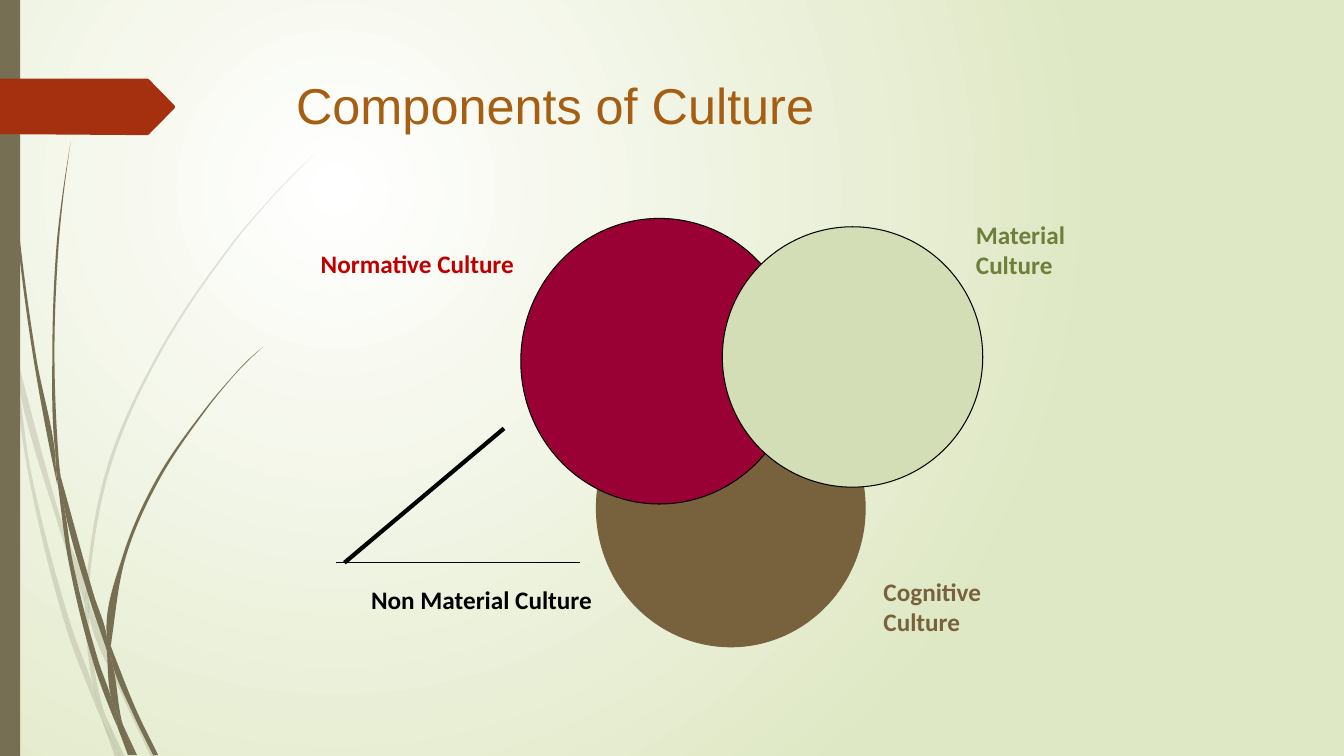
from dataclasses import dataclass

from lxml.etree import SubElement
from pptx import Presentation
from pptx.dml.color import RGBColor as RGB
from pptx.enum.shapes import MSO_CONNECTOR as CONN, MSO_SHAPE as SHAPE
from pptx.oxml import parse_xml
from pptx.oxml.ns import nsdecls, qn
from pptx.util import Pt

COLORS = {
    "white": "FFFFFF", "sage": "DFE8C4", "stem": "766F54", "tag": "A53010",
    "title": "A65E12", "black": "000000", "crimson": "990033",
    "red": "C00000", "brown": "77623D", "pale": "D4DEB6", "olive": "6D7F39",
}
CORNER = 0.7  # a turn whose cosine is below this stays sharp
Points = list[tuple[float, float]]


@dataclass
class Circle:
    left: float
    top: float
    width: float
    height: float
    fill: str
    line: str


@dataclass
class Label:
    text: str
    left: float
    top: float
    width: float
    height: float
    color: str
    size: float = 18
    font: str = "Calibri"
    bold: bool = True


@dataclass
class Rule:
    x1: float
    y1: float
    x2: float
    y2: float
    weight: float


PALE_BLADES: list[Points] = [
    [(7.9, 252), (6.5, 231.8), (0, 203), (0, 215.3), (7.2, 247.7)],
    [(41.8, 375.8), (60.5, 431.3), (61.2, 421.9), (44.6, 374.4), (10.1, 248.4), (12.2, 270.7)],
    [(66.2, 437), (63.4, 429.1), (63.4, 439.2), (88.6, 499.7), (108, 540.7),
     (111.6, 540.7), (91.4, 498.2)],
    [(85.7, 540.7), (89.3, 540.7), (75.6, 511.9)],
    [(67, 491.8), (50.4, 445.7), (22.3, 337.7), (12.2, 270.7), (7.9, 252), (20.2, 338.4),
     (46.8, 447.1), (66.2, 499), (72.7, 514.1), (71.3, 509)],
    [(60.5, 431.3), (62.6, 465.1), (67, 491.8), (69.1, 498.2), (75.6, 511.9),
     (74.2, 508.3), (65.5, 465.1), (63.4, 439.2), (63.4, 437.8)],
    [(63.4, 420.5), (79.2, 332.6), (115.2, 251.3), (164.9, 176.4), (193, 142.6),
     (208.8, 126), (224.6, 110.2), (208.1, 126), (193, 141.8), (164.2, 175.7),
     (113.8, 250.6), (77, 331.9), (61.2, 420.5), (61.2, 421.9), (63.4, 429.1)],
    [(72.7, 514.1), (82.1, 540.7), (85.7, 540.7)],
    [(63.4, 437.8), (63.4, 439.2), (63.4, 429.1), (61.2, 421.9), (60.5, 431.3)],
    [(69.1, 498.2), (67, 491.8), (71.3, 509), (72.7, 514.1), (85.7, 540.7), (75.6, 511.9)],
]
DARK_BLADES: list[Points] = [
    [(5, 79.2), (12.2, 167.8), (23.8, 255.6), (40.3, 343.4), (41, 346.3), (39.6, 329),
     (39.6, 326.2), (25.9, 255.6), (13.7, 167), (5.8, 78.5), (3.6, 34.6), (2.9, 0),
     (2.2, 0), (2.9, 34.6)],
    [(63.4, 426.2), (76.3, 464.4), (76.3, 455.8), (76.3, 454.3), (67, 424.8),
     (43.2, 339.8), (46.1, 363.6)],
    [(81.4, 467.3), (79.2, 461.5), (79.9, 472.3), (95, 509.8), (109.4, 539.3),
     (113, 539.3), (97.9, 508.3)],
    [(79.2, 497.5), (70.6, 473), (51.8, 400.3), (46.1, 363.6), (41, 343.4), (49, 401),
     (67, 474.5), (79.9, 509.8), (84.2, 519.8), (83.5, 516.2)],
    [(43.2, 339.8), (41.8, 326.2), (38.9, 251.3), (41.8, 176.4), (45.4, 139),
     (50.4, 101.5), (44.6, 139), (40.3, 176.4), (37.4, 251.3), (39.6, 323.3)],
    [(95.8, 539.3), (97.9, 539.3), (87.8, 517.7)],
    [(41, 343.4), (46.1, 363.6), (43.2, 339.8), (39.6, 323.3), (39.6, 326.2)],
    [(79.9, 455.8), (90, 397.4), (113.8, 342.7), (147.6, 292.3), (166.3, 269.3),
     (176.4, 258.5), (187.9, 247.7), (176.4, 257.8), (166.3, 268.6), (146.9, 291.6),
     (112.3, 341.3), (87.8, 396.7), (76.3, 454.3), (79.2, 461.5)],
    [(84.2, 519.8), (91.4, 539.3), (94.3, 539.3)],
    [(76.3, 464.4), (79.2, 497.5), (83.5, 508.3), (87.8, 517.7), (87.1, 515.5),
     (79.9, 472.3), (78.5, 468.7)],
    [(76.3, 464.4), (78.5, 468.7), (79.9, 472.3), (79.2, 461.5), (76.3, 454.3), (76.3, 455.8)],
    [(83.5, 508.3), (79.2, 497.5), (83.5, 516.2), (84.2, 519.8), (93.6, 539.3),
     (95.8, 539.3), (87.8, 517.7)],
]
TAG: Points = [(124.6, 77.5), (106.6, 95.8), (105.5, 96.5), (97.9, 96.5), (0, 95.8),
               (0, 56.2), (105.5, 56.2), (106.6, 56.9), (124.6, 75.2), (125, 76.3)]
CIRCLES = [Circle(426, 264, 192, 198, "brown", "brown"),
           Circle(372, 156, 198, 204, "crimson", "black"),
           Circle(516, 162, 186, 186, "pale", "black")]
TITLE = Label("Components of Culture", 204.4, 49.5, 702, 101, "title", 36, "Arial", False)
LABELS = [Label("Non Material Culture", 258, 414, 198, 29, "black"),
          Label("Normative Culture", 222, 174, 156, 29, "red"),
          Label("Cognitive\vCulture", 624, 408, 156, 51, "brown"),
          Label("Material\vCulture", 690, 153, 156, 51, "olive")]
RULES = [Rule(240, 402, 414, 402, 0.75), Rule(246, 402, 360, 306, 3)]


def rgb(name: str) -> RGB:
    return RGB.from_string(COLORS[name])


def paint(sp, fill: str, line: str | None = None) -> None:
    sp.shadow.inherit = False
    sp.fill.solid()
    sp.fill.fore_color.rgb = rgb(fill)
    if line:
        sp.line.color.rgb = rgb(line)
        sp.line.width = Pt(0.75)
    else:
        sp.line.fill.background()


def set_background(s) -> None:
    fill = s.background.fill
    fill.gradient()
    for stop, position, name in zip(fill.gradient_stops, (0, 1), ("white", "sage")):
        stop.position = position
        stop.color.rgb = rgb(name)
    grad = next(s._element.iter(qn("a:gradFill")))
    radial = parse_xml(f'<a:path {nsdecls("a")} path="circle"><a:fillToRect '
                       'l="50000" t="50000" r="100000" b="100000"/></a:path>')
    grad.replace(grad.find(qn("a:lin")), radial)


def draw_outline(s, points: Points, color: str):
    corners = [(Pt(x), Pt(y)) for x, y in points]
    builder = s.shapes.build_freeform(*corners[0])
    builder.add_line_segments(corners[1:], close=True)
    sp = builder.convert_to_shape()
    paint(sp, color)
    return sp


def add_handles(points: Points) -> Points:
    """Start point, then two handles and an end point for each curve."""
    nodes = [complex(x, y) for x, y in points]
    before, after = [], []
    for a, b, c in zip(nodes[-1:] + nodes, nodes, nodes[1:] + nodes[:1]):
        u, v = (b - a) / abs(b - a), (c - b) / abs(c - b)
        if (u * v.conjugate()).real > CORNER:
            u = v = (u + v) / abs(u + v)
        before.append(b - u * abs(b - a) / 3)
        after.append(b + v * abs(c - b) / 3)
    curve = nodes[:1]
    for i in range(len(nodes)):
        j = (i + 1) % len(nodes)
        curve += [after[i], before[j], nodes[j]]
    return [(z.real, z.imag) for z in curve]


def draw_blade(s, points: Points, alpha: int) -> None:
    sp = draw_outline(s, add_handles(points), "stem")
    lines = list(sp._element.iter(qn("a:lnTo")))
    for trio in zip(lines[::3], lines[1::3], lines[2::3]):
        curve = parse_xml(f'<a:cubicBezTo {nsdecls("a")}/>')
        trio[0].addprevious(curve)
        for line in trio:
            curve.append(line[0])
            line.getparent().remove(line)
    if alpha < 100:
        color = sp._element.spPr.find(qn("a:solidFill"))[0]
        SubElement(color, qn("a:alpha"), val=str(alpha * 1000))


def draw_circle(s, c: Circle) -> None:
    sp = s.shapes.add_shape(SHAPE.OVAL, Pt(c.left), Pt(c.top), Pt(c.width), Pt(c.height))
    paint(sp, c.fill, c.line)


def draw_label(s, label: Label) -> None:
    tf = s.shapes.add_textbox(Pt(label.left), Pt(label.top),
                              Pt(label.width), Pt(label.height)).text_frame
    tf.word_wrap = True
    p = tf.paragraphs[0]
    p.text = label.text
    p.font.size, p.font.name, p.font.bold = Pt(label.size), label.font, label.bold
    p.font.color.rgb = rgb(label.color)


def draw_rule(s, rule: Rule) -> None:
    line = s.shapes.add_connector(CONN.STRAIGHT, Pt(rule.x1), Pt(rule.y1),
                                  Pt(rule.x2), Pt(rule.y2))
    line.line.color.rgb = rgb("black")
    line.line.width = Pt(rule.weight)
    SubElement(line._element.spPr, qn("a:effectLst"))


def main() -> None:
    prs = Presentation()
    prs.slide_width, prs.slide_height = Pt(960), Pt(540)
    s = prs.slides.add_slide(prs.slide_layouts[6])
    set_background(s)
    # Side decoration
    for blades, alpha in ((PALE_BLADES, 20), (DARK_BLADES, 100)):
        for points in blades:
            draw_blade(s, points, alpha)
    paint(s.shapes.add_shape(SHAPE.RECTANGLE, 0, 0, Pt(14.4), Pt(540)), "stem")
    draw_outline(s, TAG, "tag")
    # Diagram
    draw_circle(s, CIRCLES[0])
    draw_label(s, TITLE)
    for circle in CIRCLES[1:]:
        draw_circle(s, circle)
    for label in LABELS:
        draw_label(s, label)
    for rule in RULES:
        draw_rule(s, rule)
    prs.save("out.pptx")


if __name__ == "__main__":
    main()
